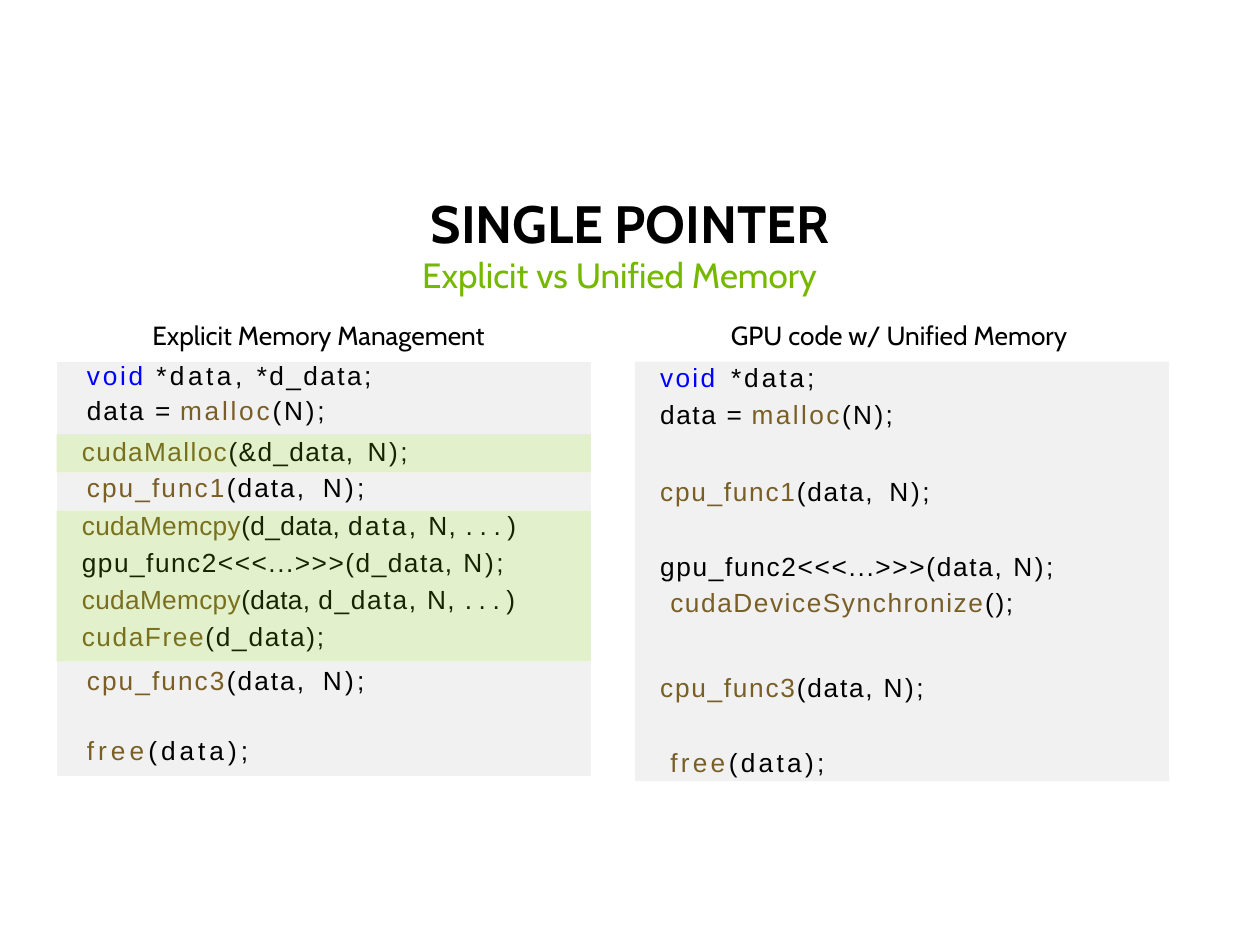
from dataclasses import dataclass

from lxml.etree import SubElement
from pptx import Presentation
from pptx.dml.color import RGBColor as RGB
from pptx.enum.shapes import MSO_SHAPE as Shape
from pptx.enum.text import MSO_ANCHOR as Anchor, PP_ALIGN as Align
from pptx.oxml.ns import qn
from pptx.util import Inches, Pt


@dataclass(frozen=True)
class Theme:
    """Colours, fonts and type sizes of the slide."""
    ink: str = "000000"
    green: str = "76B800"
    panel: str = "F1F1F1"
    keyword: str = "0000FF"
    call: str = "795E25"
    head_font: str = "Cabin"
    code_font: str = "Arial"
    title: int = 30
    subtitle: int = 20
    body: int = 15
    tint: int = 20


T = Theme()


def add_run(p, text, size=T.body, font=T.code_font, color=T.ink, bold=False, spacing=0):
    """Append one formatted run to a paragraph."""
    r = p.add_run()
    r.text = text
    r.font.size, r.font.name, r.font.bold = Pt(size), font, bold
    r.font.color.rgb = RGB.from_string(color)
    if spacing:
        r._r.get_or_add_rPr().set("spc", str(round(spacing * 100)))


def add_paragraph(tf, first, before=0, indent=0, leading=None):
    """Return the first or a further paragraph of a text frame."""
    p = tf.paragraphs[0] if first else tf.add_paragraph()
    p.alignment = Align.LEFT
    p.space_before = Pt(before)
    if leading:
        p.line_spacing = Pt(leading)
    p._p.get_or_add_pPr().set("marL", str(Inches(indent)))
    return p


def write_code(tf, lines, indent=0):
    """Write code lines given as (paragraph format, runs)."""
    for i, (layout, runs) in enumerate(lines):
        p = add_paragraph(tf, i == 0, **{"indent": indent, **layout})
        for text, spacing, *color in runs:
            add_run(p, text, spacing=spacing, color=color[0] if color else T.ink)


def set_margins(frame, top=0):
    """Remove the inner margins of a text frame or cell, except the top one."""
    frame.margin_left = frame.margin_right = frame.margin_bottom = 0
    frame.margin_top = Inches(top)


def add_text_box(s, x, y, w, h, top=0):
    """Add an empty text box and return its text frame."""
    tf = s.shapes.add_textbox(Inches(x), Inches(y), Inches(w), Inches(h)).text_frame
    set_margins(tf, top)
    tf.word_wrap = True
    return tf


def add_panel(s, x, y, w, h, lines, indent):
    """Add a grey rectangle holding code."""
    sp = s.shapes.add_shape(Shape.RECTANGLE, Inches(x), Inches(y), Inches(w), Inches(h))
    sp.shadow.inherit = False
    sp.fill.solid()
    sp.fill.fore_color.rgb = RGB.from_string(T.panel)
    sp.line.fill.background()
    tf = sp.text_frame
    set_margins(tf)
    tf.word_wrap, tf.vertical_anchor = True, Anchor.TOP
    write_code(tf, lines, indent)


def fill_cell(cell, color, opacity=100):
    """Fill a table cell, optionally translucent."""
    cell.fill.solid()
    cell.fill.fore_color.rgb = RGB.from_string(color)
    if opacity < 100:
        clr = cell._tc.tcPr.find(".//" + qn("a:srgbClr"))
        SubElement(clr, qn("a:alpha")).set("val", str(opacity * 1000))


def add_code_table(s, x, y, w, rows, indent):
    """Add a one-column table; rows without code are tinted bands."""
    height = sum(h for h, _, _ in rows)
    table = s.shapes.add_table(len(rows), 1, Inches(x), Inches(y), Inches(w), Inches(height)).table
    table.first_row = table.horz_banding = False
    style = table._tbl.tblPr.find(qn("a:tableStyleId"))
    style.text = "{2D5ABB26-0587-4C30-8999-92F81FD0307C}"
    for i, (h, top, lines) in enumerate(rows):
        table.rows[i].height = Inches(h)
        cell = table.cell(i, 0)
        set_margins(cell, top)
        if lines:
            fill_cell(cell, T.panel)
            write_code(cell.text_frame, lines, indent)
        else:
            fill_cell(cell, T.green, T.tint)


def add_headings(s):
    """Add the title, subtitle and the two column headings."""
    tf = add_text_box(s, 3.41, 1.51, 3.4, 0.52, top=0.01)
    p = add_paragraph(tf, True, before=0.8, indent=0.01)
    add_run(p, "SINGLE ", size=T.title, font=T.head_font, bold=True, spacing=-0.1)
    add_run(p, "POINTER", size=T.title, font=T.head_font, bold=True)

    tf = add_text_box(s, 1.2, 2, 7.35, 0.8, top=0.01)
    p = add_paragraph(tf, True, before=0.8, indent=2.15)
    add_run(p, "Explicit vs Unified Memory", size=T.subtitle, font=T.head_font, color=T.green)
    p = add_paragraph(tf, False, before=13.5, indent=0.01)
    tabs = SubElement(p._p.get_or_add_pPr(), qn("a:tabLst"))
    tab = SubElement(tabs, qn("a:tab"))
    tab.set("pos", str(Inches(4.59)))
    tab.set("algn", "l")
    add_run(p, "Explicit Memory Management\tGPU code w/ Unified Memory", font=T.head_font)


def add_explicit_code(s):
    """Add the explicit memory management column."""
    write_code(add_text_box(s, 0.65, 3.51, 2.63, 0.2), [
        ({"leading": 14.2}, [("cudaMalloc", 0.8, T.call), ("(&d_data,", 0.8), (" ", 3.1), ("N);", 1.5)]),
    ])
    step = {"leading": 21.1}
    write_code(add_text_box(s, 0.65, 4.1, 3.66, 1.09), [
        ({"leading": 14.1}, [("cudaMemcpy", 0.2, T.call), ("(d_data, ", 0.2), ("data, ", 1.4),
                             ("N, ", 0.7), ("...)", 3.8)]),
        (step, [("gpu_func2<<<...>>>(d_data, ", 0.88), ("N);", 1.5)]),
        (step, [("cudaMemcpy", 0.2, T.call), ("(data, ", 0.2), ("d_data, ", 1),
                ("N, ", 0.8), ("...)", 3.8)]),
        (step, [("cudaFree", 0.9, T.call), ("(d_data);", 1)]),
    ])
    add_code_table(s, 0.45, 2.87, 4.24, [
        (0.58, 0, [
            ({}, [("void ", 1.6, T.keyword), ("*data, ", 2), ("*d_data;", 1.4)]),
            ({"before": 3.6}, [("data ", 1.1), ("= ", 0.7), ("malloc", 1.6, T.call), ("(N);", 1.6)]),
        ]),
        (0.3, 0, None),
        (0.3, 0.01, [
            ({}, [("cpu_func1", 1.2, T.call), ("(data,", 1.2), (" ", 5.2), ("N);", 1.9)]),
        ]),
        (1.2, 0, None),
        (0.91, 0.04, [
            ({}, [("cpu_func3", 1.2, T.call), ("(data,", 1.2), (" ", 5.2), ("N);", 1.9)]),
            ({"before": 23.7}, [("free", 2.3, T.call), ("(data);", 2.3)]),
        ]),
    ], indent=0.24)


def add_unified_code(s):
    """Add the unified memory column."""
    add_panel(s, 5.04, 2.87, 4.24, 3.33, [
        ({"before": 1.5}, [("void", 1.3, T.keyword), (" ", 3.6), ("*data;", 1.7)]),
        ({"before": 3.2}, [("data ", 0.9), ("= ", 0.7), ("malloc", 1.4, T.call), ("(N);", 1.4)]),
        ({"before": 25.5}, [("cpu_func1", 1, T.call), ("(data,", 1), (" ", 4.4), ("N);", 1.5)]),
        ({"before": 25.3}, [("gpu_func2<<<...>>>(data, ", 0.95), ("N);", 1.5)]),
        ({"before": 2.6, "indent": 0.28}, [("cudaDeviceSynchronize", 0.9, T.call), ("();", 0.9)]),
        ({"before": 30.2}, [("cpu_func3", 1, T.call), ("(data, ", 1), ("N);", 1.5)]),
        ({"before": 25, "indent": 0.28}, [("free", 1.9, T.call), ("(data);", 1.9)]),
    ], indent=0.2)


def main():
    """Build and save the slide."""
    prs = Presentation()
    prs.slide_width, prs.slide_height = Inches(10), Inches(7.5)
    s = prs.slides.add_slide(prs.slide_layouts[6])
    add_headings(s)
    add_explicit_code(s)
    add_unified_code(s)
    prs.save("out.pptx")


if __name__ == "__main__":
    main()
